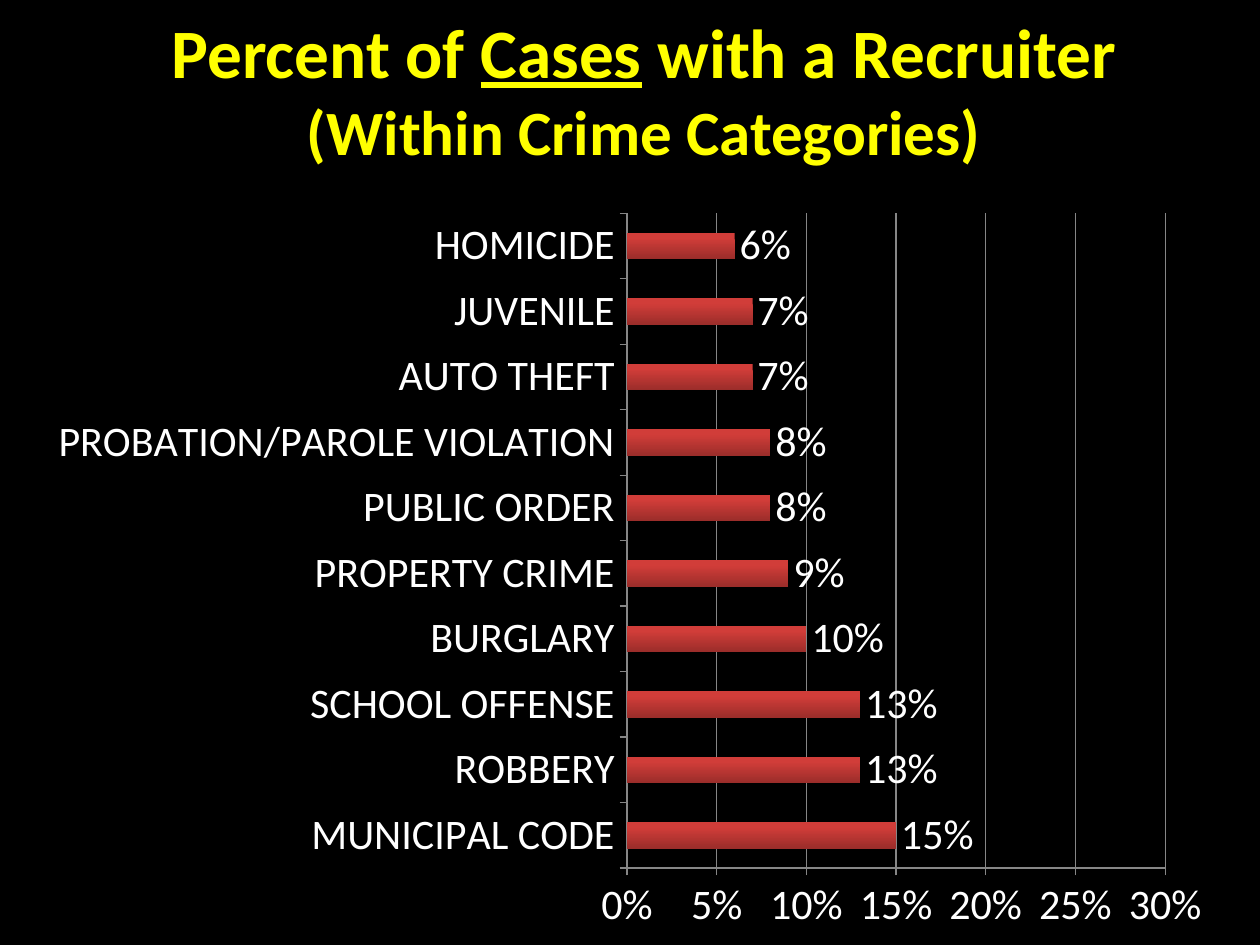
from dataclasses import dataclass

from pptx import Presentation
from pptx import util as u
from pptx.chart.data import CategoryChartData
from pptx.dml.color import RGBColor
from pptx.enum import chart as kinds
from pptx.enum import text
from pptx.oxml import parse_xml
from pptx.oxml.ns import nsdecls, qn


@dataclass(frozen=True)
class Theme:
    font: str = "Calibri"
    background: str = "000000"
    title: str = "FFFF00"
    label: str = "FFFFFF"
    grid: str = "868686"
    bar_top: str = "D13D39"
    bar_bottom: str = "9B2D2A"
    title_size: float = 39.6
    subtitle_size: float = 36
    chart_size: float = 24
    line_width: float = 0.75


THEME = Theme()
WIDTH, HEIGHT = u.Inches(10), u.Inches(7.5)
CASE_SHARES = {
    "MUNICIPAL CODE": 0.15,
    "ROBBERY": 0.13,
    "SCHOOL OFFENSE": 0.13,
    "BURGLARY": 0.10,
    "PROPERTY CRIME": 0.09,
    "PUBLIC ORDER": 0.08,
    "PROBATION/PAROLE VIOLATION": 0.08,
    "AUTO THEFT": 0.07,
    "JUVENILE": 0.07,
    "HOMICIDE": 0.06,
}


def color(value):
    return RGBColor.from_string(value)


def area(left, top, width, height):
    return (int(left * WIDTH), int(top * HEIGHT),
            int(width * WIDTH), int(height * HEIGHT))


def style_font(font, size, fill, bold=False, underline=False):
    font.name = THEME.font
    font.size = u.Pt(size)
    font.color.rgb = color(fill)
    font.bold = bold
    font.underline = underline


def add_text(para, words, **style):
    span = para.add_run()
    span.text = words
    style_font(span.font, **style)


def add_title(page):
    box = page.shapes.add_textbox(*area(0.05, 0.01, 0.922, 0.167))
    frame = box.text_frame
    frame.word_wrap = True
    frame.vertical_anchor = text.MSO_ANCHOR.MIDDLE
    para = frame.paragraphs[0]
    para.alignment = text.PP_ALIGN.CENTER
    main_style = dict(size=THEME.title_size, fill=THEME.title, bold=True)
    add_text(para, "Percent of ", **main_style)
    add_text(para, "Cases", underline=True, **main_style)
    add_text(para, " with a Recruiter", **main_style)
    para.add_line_break()
    add_text(para, "(Within Crime Categories)", size=THEME.subtitle_size,
             fill=THEME.title, bold=True)


def style_line(line):
    line.color.rgb = color(THEME.grid)
    line.width = u.Pt(THEME.line_width)


def style_axis(axis):
    axis.major_tick_mark = kinds.XL_TICK_MARK.OUTSIDE
    axis.minor_tick_mark = kinds.XL_TICK_MARK.NONE
    style_line(axis.format.line)
    style_font(axis.tick_labels.font, THEME.chart_size, THEME.label)


def place_plot(chart, **shares):
    plot_area = chart.element.find(".//" + qn("c:plotArea"))
    for layout in plot_area.findall(qn("c:layout")):
        plot_area.remove(layout)
    sides = "".join(f'<c:{side} val="{share}"/>' for side, share in shares.items())
    plot_area.insert(0, parse_xml(
        f'<c:layout {nsdecls("c")}><c:manualLayout><c:layoutTarget val="inner"/>'
        f'<c:xMode val="edge"/><c:yMode val="edge"/>{sides}'
        '</c:manualLayout></c:layout>'))


def style_bars(plot):
    plot.gap_width = 150
    plot.vary_by_categories = False
    fill = plot.series[0].format.fill
    fill.gradient()
    fill.gradient_angle = 270
    for stop, shade, position in zip(
            fill.gradient_stops, (THEME.bar_top, THEME.bar_bottom), (0.2, 1)):
        stop.color.rgb = color(shade)
        stop.position = position
    plot.has_data_labels = True
    labels = plot.data_labels
    labels.show_value = True
    labels.number_format = "0%"
    labels.number_format_is_linked = False
    labels.position = kinds.XL_LABEL_POSITION.OUTSIDE_END
    style_font(labels.font, THEME.chart_size, THEME.label)


def add_bar_chart(page):
    data = CategoryChartData(number_format="0%")
    data.categories = list(CASE_SHARES)
    data.add_series("Series 1", list(CASE_SHARES.values()))
    chart = page.shapes.add_chart(kinds.XL_CHART_TYPE.BAR_CLUSTERED,
                                  *area(0.028, 0.21, 0.945, 0.79), data).chart
    chart.has_legend = False
    chart.has_title = False
    style_font(chart.font, THEME.chart_size, THEME.label)
    for axis in (chart.category_axis, chart.value_axis):
        style_axis(axis)
    values = chart.value_axis
    values.minimum_scale, values.maximum_scale = 0, 0.3
    values.major_unit = 0.05
    values.has_major_gridlines = True
    style_line(values.major_gridlines.format.line)
    values.tick_labels.number_format = "0%"
    values.tick_labels.number_format_is_linked = False
    style_bars(chart.plots[0])
    place_plot(chart, x=0.497, y=0.02, w=0.452, h=0.877)


def main():
    deck = Presentation()
    deck.slide_width, deck.slide_height = WIDTH, HEIGHT
    page = deck.slides.add_slide(deck.slide_layouts[6])
    page.background.fill.solid()
    page.background.fill.fore_color.rgb = color(THEME.background)
    add_title(page)
    add_bar_chart(page)
    deck.save("out.pptx")


if __name__ == "__main__":
    main()
